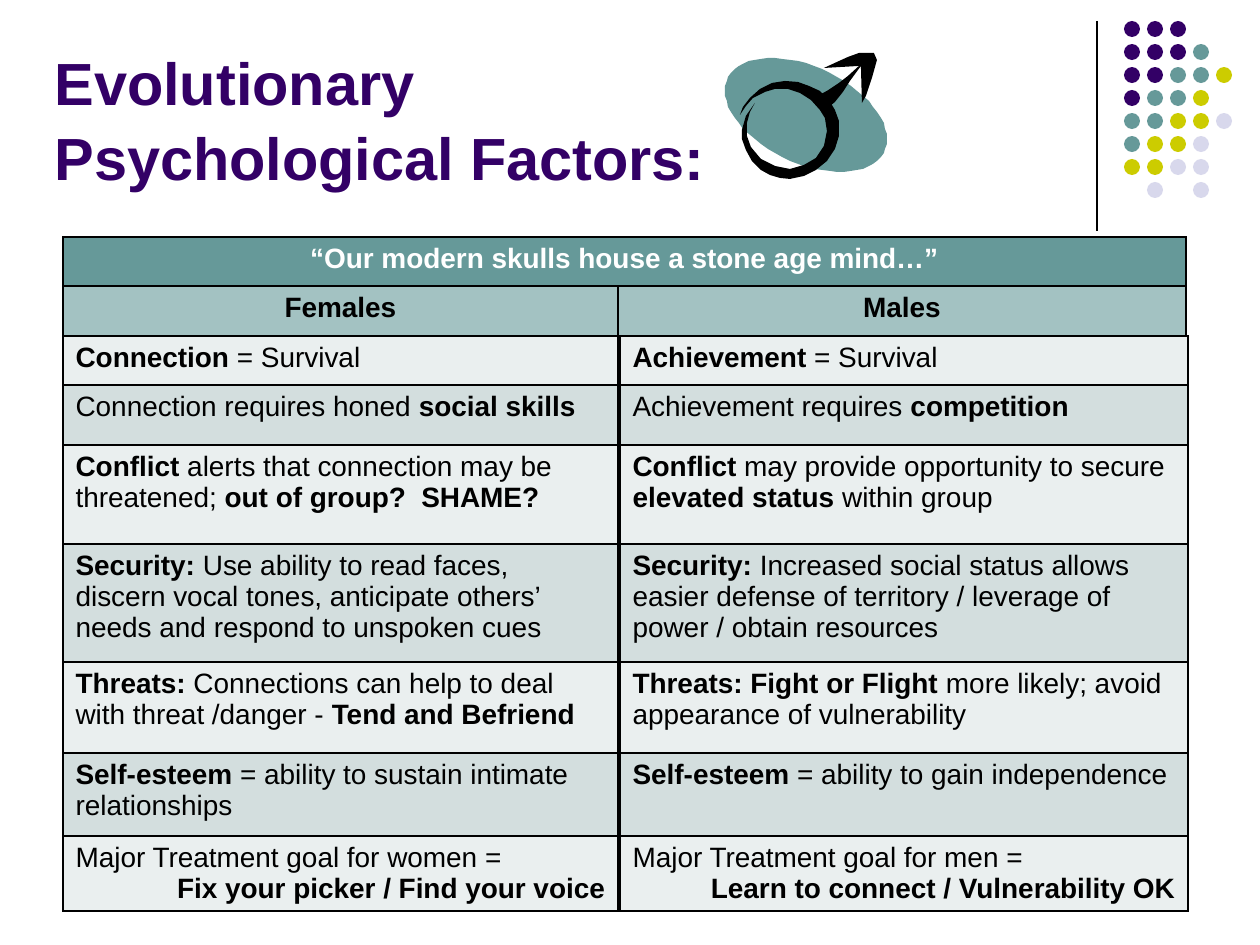
from math import cos, pi

from lxml import etree
from pptx import Presentation
from pptx.dml.color import RGBColor
from pptx.enum.shapes import MSO_CONNECTOR, MSO_SHAPE
from pptx.enum.text import MSO_ANCHOR, MSO_AUTO_SIZE, PP_ALIGN
from pptx.oxml.ns import qn
from pptx.util import Emu, Pt

LEFT, CENTER, RIGHT = PP_ALIGN.LEFT, PP_ALIGN.CENTER, PP_ALIGN.RIGHT
OVAL, STRAIGHT = MSO_SHAPE.OVAL, MSO_CONNECTOR.STRAIGHT
BOTTOM, NO_FIT = MSO_ANCHOR.BOTTOM, MSO_AUTO_SIZE.NONE

TITLE = "Evolutionary Psychological Factors:"
QUOTE = "“Our modern skulls house a stone age mind…”"
HEADINGS = ["Females", "Males"]
FEMALES = [
    "**Connection** = Survival",
    "Connection requires honed **social skills**",
    "**Conflict** alerts that connection may be threatened; **out of group?  SHAME?**",
    "**Security: **Use ability to read faces, discern vocal tones, anticipate others’ "
    "needs and respond to unspoken cues",
    "**Threats:** Connections can help to deal with threat /danger - **Tend and Befriend**",
    "**Self-esteem **= ability to sustain intimate relationships",
    "Major Treatment goal for women =\n**Fix your picker / Find your voice**",
]
MALES = [
    "**Achievement** = Survival",
    "Achievement requires **competition**",
    "**Conflict** may provide opportunity to secure **elevated status **within group",
    "**Security: **Increased social status allows easier defense of territory / leverage of "
    "power / obtain resources",
    "**Threats: Fight or Flight **more likely; avoid appearance of vulnerability",
    "**Self-esteem** = ability to gain independence",
    "Major Treatment goal for men =\n**Learn to connect / Vulnerability OK**",
]
DOTS = ["DDD", "DDDT", "DDTTY", "DTTY", "TTYYP", "TYYP", "YYPP", " P P"]
ARROW = [
    (872, 53), (859, 53), (848, 57), (837, 62), (824, 68), (859, 66), (848, 76), (839, 83),
    (827, 91), (815, 97), (815, 100), (819, 103), (823, 112), (835, 102), (843, 92),
    (850, 81), (861, 66), (862, 103), (866, 96), (872, 78), (877, 60), (874, 53),
]
RING = [
    (750, 112), (755, 103), (746, 116), (742, 130), (742, 139), (746, 150), (752, 161),
    (761, 170), (770, 175), (780, 178), (790, 179), (804, 176), (816, 170), (827, 161),
    (835, 149), (839, 136), (839, 121), (835, 110), (829, 100), (820, 91), (809, 86),
    (798, 82), (785, 81), (772, 83), (760, 89), (750, 98), (743, 107), (740, 115),
    (746, 106), (753, 98), (765, 92), (775, 89), (788, 89), (800, 93), (811, 100),
    (820, 110), (825, 118), (827, 131), (824, 146), (816, 158), (804, 165), (790, 169),
    (775, 166), (761, 159), (751, 147), (747, 136), (747, 123),
]
THEME = {
    "font": "Arial", "title": 34, "body": 16,
    "D": "330066", "T": "669999", "Y": "CCCC00", "P": "D8D8EC",
    "black": "000000", "white": "FFFFFF", "heading": "A3C2C2",
    "bands": ["EAEFEF", "D3DEDE"],
}
SCALE = 914400 / 126
TABLE_LEFT, TABLE_TOP, MALES_LEFT = 63, 237, 620
COLS = [555, 568]
HEAD_ROWS = [49, 50]
BODY_ROWS = [49, 60, 99, 118, 91, 83, 75]
DOT_LEFT, DOT_TOP, DOT_SIZE, DOT_STEP = 1124, 21, 16, 23


def px(*lengths):
    return [Emu(round(n * SCALE)) for n in lengths]


def color(value):
    return RGBColor.from_string(value)


def paint(sp, value):
    sp.shadow.inherit = False
    sp.fill.solid()
    sp.fill.fore_color.rgb = color(value)
    sp.line.fill.background()


def style(p, size, value, align=LEFT):
    p.alignment = align
    p.font.name, p.font.size = THEME["font"], Pt(size)
    p.font.color.rgb = color(value)


def add_outline(slide, points, value):
    builder = slide.shapes.build_freeform(*points[0], scale=SCALE)
    builder.add_line_segments(points[1:], close=True)
    paint(builder.convert_to_shape(), value)


def add_borders(cell):
    tc_pr = cell._tc.get_or_add_tcPr()
    for i, side in enumerate(("lnL", "lnR", "lnT", "lnB")):
        ln = etree.Element(qn("a:" + side), w=str(Pt(1)))
        fill = etree.SubElement(ln, qn("a:solidFill"))
        etree.SubElement(fill, qn("a:srgbClr"), val=THEME["black"])
        tc_pr.insert(i, ln)


def fill_cell(cell, text, fill, value=THEME["black"], align=LEFT):
    cell.fill.solid()
    cell.fill.fore_color.rgb = color(fill)
    add_borders(cell)
    tf = cell.text_frame
    for i, line in enumerate(text.split("\n")):
        p = tf.add_paragraph() if i else tf.paragraphs[0]
        style(p, THEME["body"], value, RIGHT if i else align)
        for j, part in enumerate(line.split("**")):
            if part:
                r = p.add_run()
                r.text = part
                r.font.bold = j % 2 == 1


def add_grid(slide, left, top, cols, rows):
    box = px(left, top, sum(cols), sum(rows))
    table = slide.shapes.add_table(len(rows), len(cols), *box).table
    table.first_row = table.horz_banding = False
    for col, width in zip(table.columns, px(*cols)):
        col.width = width
    for row, height in zip(table.rows, px(*rows)):
        row.height = height
    return table


def add_title(slide):
    sp = slide.shapes.title
    sp.left, sp.top, sp.width, sp.height = px(42, 42, 683, 157)
    tf = sp.text_frame
    tf.text = TITLE
    tf.word_wrap, tf.auto_size, tf.vertical_anchor = True, NO_FIT, BOTTOM
    p = tf.paragraphs[0]
    style(p, THEME["title"], THEME["D"])
    p.font.bold = True
    p.line_spacing = 1.05


def add_dots(slide):
    group = slide.shapes.add_group_shape()
    for row, keys in enumerate(DOTS):
        for col, key in enumerate(keys):
            if key != " ":
                x, y = DOT_LEFT + col * DOT_STEP, DOT_TOP + row * DOT_STEP
                paint(group.shapes.add_shape(OVAL, *px(x, y, DOT_SIZE, DOT_SIZE)), THEME[key])


def add_symbol(slide):
    angles = [2 * pi * i / 64 for i in range(64)]
    tilt = 0.36 * pi
    blob = [(806 + 81 * cos(a), 115 + 57 * cos(a - tilt)) for a in angles]
    add_outline(slide, blob, THEME["T"])
    add_outline(slide, ARROW, THEME["black"])
    add_outline(slide, RING, THEME["black"])


def add_tables(slide):
    head = add_grid(slide, TABLE_LEFT, TABLE_TOP, COLS, HEAD_ROWS)
    head.cell(0, 0).merge(head.cell(0, 1))
    fill_cell(head.cell(0, 0), f"**{QUOTE}**", THEME["T"], THEME["white"], CENTER)
    add_borders(head.cell(0, 1))
    for col, text in enumerate(HEADINGS):
        fill_cell(head.cell(1, col), f"**{text}**", THEME["heading"], align=CENTER)
    top = TABLE_TOP + sum(HEAD_ROWS)
    for left, width, texts in zip((TABLE_LEFT, MALES_LEFT), COLS, (FEMALES, MALES)):
        body = add_grid(slide, left, top, [width], BODY_ROWS)
        for row, text in enumerate(texts):
            fill_cell(body.cell(row, 0), text, THEME["bands"][row % 2])


def main():
    prs = Presentation()
    prs.slide_width, prs.slide_height = px(1260, 945)
    slide = prs.slides.add_slide(prs.slide_layouts[5])
    rule = slide.shapes.add_connector(STRAIGHT, *px(1097, 21, 1097, 231))
    rule.line.color.rgb = color(THEME["black"])
    rule.line.width = Pt(0.75)
    etree.SubElement(rule._element.spPr, qn("a:effectLst"))
    add_dots(slide)
    add_title(slide)
    add_symbol(slide)
    add_tables(slide)
    prs.save("out.pptx")


if __name__ == "__main__":
    main()
